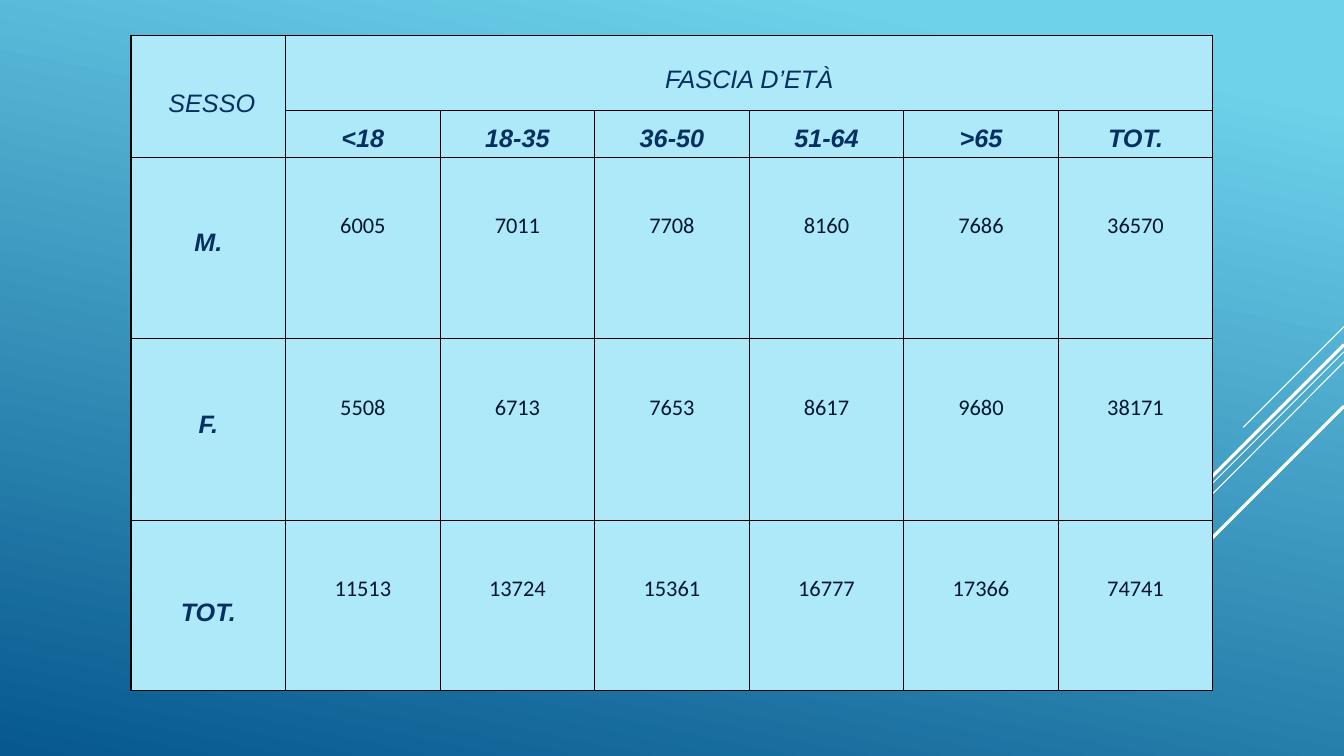
import pptx
import pptx.util
import pptx.dml.color
import pptx.enum.shapes
import pptx.enum.text
import pptx.oxml.ns
import lxml.etree

Inches = pptx.util.Inches
Pt = pptx.util.Pt
RGBColor = pptx.dml.color.RGBColor
Anchor = pptx.enum.text.MSO_ANCHOR
qn = pptx.oxml.ns.qn

SKY = RGBColor(0x6E, 0xD2, 0xEB)
DEEP_BLUE = RGBColor(0x06, 0x58, 0x8E)
PALE_BLUE = RGBColor(0xAD, 0xE9, 0xF8)
NAVY = RGBColor(0x05, 0x2F, 0x61)
INK = RGBColor(0x03, 0x17, 0x30)
WHITE = RGBColor(0xFF, 0xFF, 0xFF)
BLACK = RGBColor(0, 0, 0)

TITLE = {"name": "Arial", "size": Pt(18), "italic": True, "bold": False}
HEADING = {**TITLE, "bold": True}
FIGURE = {"name": "Calibri", "size": Pt(16), "italic": False, "bold": False}
CELL = {"margin_left": Inches(0.07), "margin_right": Inches(0.07), "margin_bottom": 0}
PARAGRAPH = {
    "alignment": pptx.enum.text.PP_ALIGN.CENTER,
    "line_spacing": 1.5,
    "space_after": Pt(10),
}

TABLE_FRAME = (1.3, 0.35, 10.73, 6.5)
ROW_HEIGHTS = (0.75, 0.46, 1.8, 1.8, 1.69)
ROWS = (
    (" SESSO", "FASCIA D’ETÀ", "", "", "", "", ""),
    ("", "<18", "18-35", "36-50", "51-64", ">65", "TOT."),
    ("M.", "6005", "7011", "7708", "8160", "7686", "36570"),
    ("F.", "5508", "6713", "7653", "8617", "9680", "38171"),
    ("TOT.", "11513", "13724", "15361", "16777", "17366", "74741"),
)
DIAGONALS = (
    (3.24, 12.33, 4.24, 0.75),
    (3.49, 10.07, 6.75, 0.75),
    (3.59, 11.26, 5.67, 0.75),
    (3.42, 11.42, 5.33, 2.25),
    (4.03, 11.94, 5.42, 2.25),
)


def apply(target, values):
    for name, value in values.items():
        setattr(target, name, value)


class SlideBuilder:
    def __init__(self, slide):
        self.slide = slide

    def background(self, stops, angle):
        fill = self.slide.background.fill
        fill.gradient()
        fill.gradient_angle = angle
        for stop, (position, color) in zip(fill.gradient_stops, stops):
            stop.position = position
            stop.color.rgb = color

    def line(self, start, end, width):
        connector = self.slide.shapes.add_connector(
            pptx.enum.shapes.MSO_CONNECTOR.STRAIGHT,
            *(Inches(value) for value in start + end),
        )
        connector.line.color.rgb = WHITE
        connector.line.width = Pt(width)
        properties = connector._element.spPr
        lxml.etree.SubElement(properties, qn("a:effectLst"))

    def borders(self, cell):
        properties = cell._tc.get_or_add_tcPr()
        for index, side in enumerate(("lnL", "lnR", "lnT", "lnB")):
            border = properties.makeelement(qn(f"a:{side}"), {"w": str(Pt(1))})
            fill = lxml.etree.SubElement(border, qn("a:solidFill"))
            lxml.etree.SubElement(fill, qn("a:srgbClr"), val=str(BLACK))
            properties.insert(index, border)

    def cell(self, cell, text, font, color, anchor, top):
        apply(cell, {**CELL, "vertical_anchor": anchor, "margin_top": Inches(top)})
        cell.fill.solid()
        cell.fill.fore_color.rgb = PALE_BLUE
        self.borders(cell)
        paragraph = cell.text_frame.paragraphs[0]
        apply(paragraph, PARAGRAPH)
        if text:
            run = paragraph.add_run()
            run.text = text
            apply(run.font, font)
            run.font.color.rgb = color

    def table(self, frame, rows, heights):
        table = self.slide.shapes.add_table(
            len(rows), len(rows[0]), *(Inches(value) for value in frame)
        ).table
        apply(table, {"first_row": False, "horz_banding": False})
        for row, height in zip(table.rows, heights):
            row.height = Inches(height)
        for column in table.columns:
            column.width = Inches(frame[2] / len(rows[0]))
        last = len(rows) - 1
        for row, texts in enumerate(rows):
            for column, text in enumerate(texts):
                font, color, anchor, top = HEADING, NAVY, Anchor.TOP, 0
                if row == 0:
                    font, anchor = TITLE, Anchor.MIDDLE
                elif row > 1 and column > 0:
                    font, color, top = FIGURE, INK, 0.41
                elif row == last:
                    anchor = Anchor.MIDDLE
                elif row > 1:
                    top = 0.57
                self.cell(table.cell(row, column), text, font, color, anchor, top)
        table.cell(0, 0).merge(table.cell(1, 0))
        table.cell(0, 1).merge(table.cell(0, len(rows[0]) - 1))


def main():
    presentation = pptx.Presentation()
    presentation.slide_width = Inches(13.33)
    presentation.slide_height = Inches(7.5)
    builder = SlideBuilder(presentation.slides.add_slide(presentation.slide_layouts[6]))
    builder.background(((0.1, SKY), (1, DEEP_BLUE)), 258)
    for top, left, bottom, width in DIAGONALS:
        builder.line((13.33, top), (left, bottom), width)
    builder.table(TABLE_FRAME, ROWS, ROW_HEIGHTS)
    presentation.save("out.pptx")


if __name__ == "__main__":
    main()
